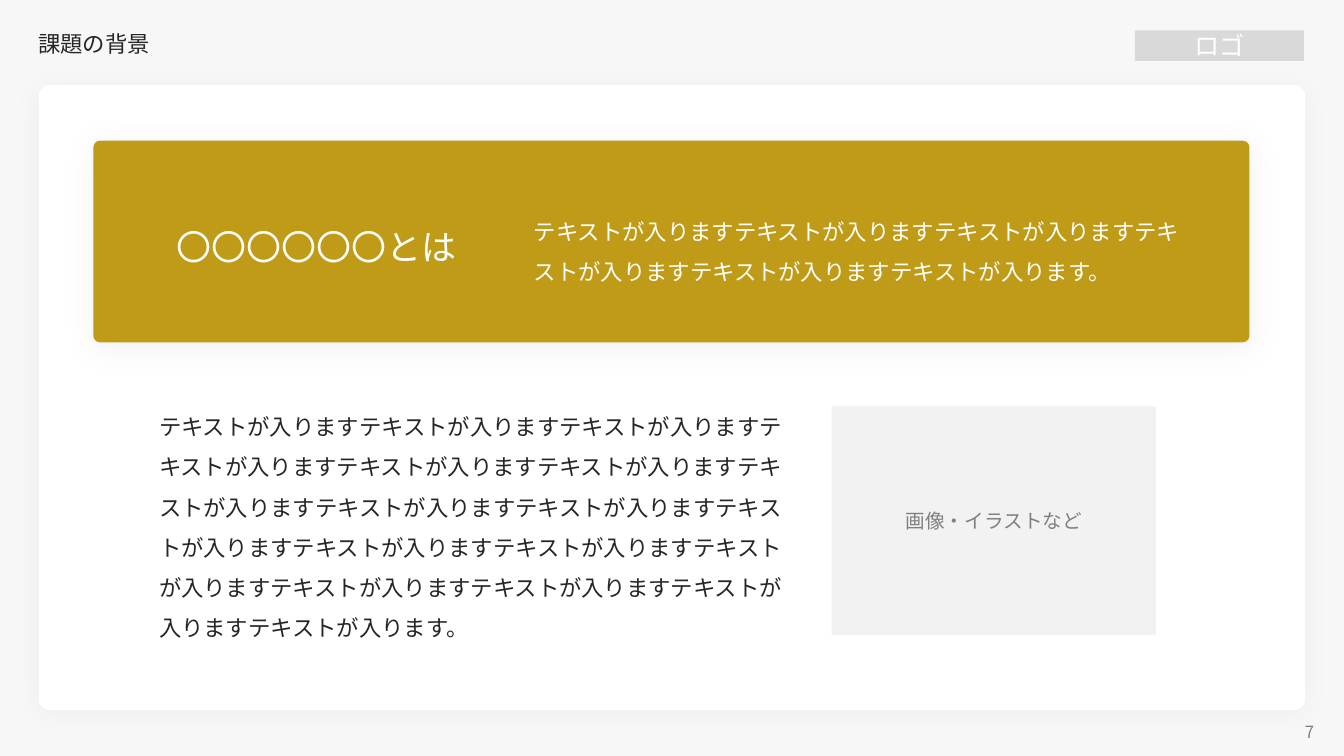
from dataclasses import dataclass
from typing import Optional

from lxml.etree import SubElement
from pptx import Presentation
from pptx.dml.color import RGBColor
from pptx.enum.lang import MSO_LANGUAGE_ID as Language
from pptx.enum.shapes import MSO_SHAPE as Preset
from pptx.enum.text import MSO_ANCHOR as Anchor, MSO_AUTO_SIZE as AutoSize, PP_ALIGN as Align
from pptx.oxml.ns import qn
from pptx.shapes.autoshape import Shape
from pptx.slide import Slide
from pptx.util import Emu, Pt

PX = 9525
PAGE_WIDTH, PAGE_HEIGHT = 1280, 720
JAPANESE_FONT = "Noto Sans CJK JP"
COLORS = {
    "white": "FFFFFF",
    "black": "000000",
    "backdrop": "F7F7F7",
    "logo": "D9D9D9",
    "gold": "C09B17",
    "image": "F2F2F2",
    "ink": "262626",
    "gray": "808080",
}
FILLER = "テキストが入ります"


@dataclass(frozen=True)
class Area:
    left: int
    top: int
    width: int
    height: int

    def emu(self) -> tuple[Emu, ...]:
        return tuple(Emu(side * PX) for side in (self.left, self.top, self.width, self.height))


@dataclass(frozen=True)
class Panel:
    area: Area
    fill: str
    radius: Optional[float] = None
    outline: Optional[str] = None
    shadow: Optional[str] = None
    shadow_opacity: int = 0


def rgb(name: str) -> RGBColor:
    return RGBColor.from_string(COLORS[name])


def add_soft_shadow(shape: Shape, color: str, opacity: int) -> None:
    effects = shape._element.spPr.find(qn("a:effectLst"))
    shadow = SubElement(effects, qn("a:outerShdw"), blurRad=str(Pt(20)), dist=str(Pt(3)),
                        dir="5400000", algn="t", rotWithShape="0")
    tint = SubElement(shadow, qn("a:srgbClr"), val=COLORS[color])
    SubElement(tint, qn("a:alpha"), val=str(opacity * 1000))


def draw_panel(page: Slide, panel: Panel) -> Shape:
    preset = Preset.RECTANGLE if panel.radius is None else Preset.ROUNDED_RECTANGLE
    shape = page.shapes.add_shape(preset, *panel.area.emu())
    if panel.radius is not None:
        shape.adjustments[0] = panel.radius
    shape.fill.solid()
    shape.fill.fore_color.rgb = rgb(panel.fill)
    if panel.outline:
        shape.line.color.rgb = rgb(panel.outline)
        shape.line.width = Pt(4.5)
    else:
        shape.line.fill.background()
    shape.shadow.inherit = False
    if panel.shadow:
        add_soft_shadow(shape, panel.shadow, panel.shadow_opacity)
    return shape


def write(box: Shape, text: str, *, size: int, color: str, font: str = JAPANESE_FONT,
          align: Align = Align.LEFT, anchor: Anchor = Anchor.MIDDLE,
          spacing: float = 1.0, grow: bool = False) -> None:
    frame = box.text_frame
    frame.word_wrap = True
    frame.vertical_anchor = anchor
    frame.auto_size = AutoSize.SHAPE_TO_FIT_TEXT if grow else AutoSize.NONE
    para = frame.paragraphs[0]
    para.alignment = align
    para.line_spacing = spacing
    span = para.add_run()
    span.text = text
    span.font.size = Pt(size)
    span.font.color.rgb = rgb(color)
    span.font.name = font
    span.font.language_id = Language.JAPANESE
    SubElement(span._r.get_or_add_rPr(), qn("a:ea"), typeface=font)


def add_text(page: Slide, area: Area, text: str, **style) -> None:
    write(page.shapes.add_textbox(*area.emu()), text, **style)


def main() -> None:
    deck = Presentation()
    deck.slide_width, deck.slide_height = Emu(PAGE_WIDTH * PX), Emu(PAGE_HEIGHT * PX)
    page = deck.slides.add_slide(deck.slide_layouts[6])

    draw_panel(page, Panel(Area(0, 0, PAGE_WIDTH, PAGE_HEIGHT), "backdrop", radius=0))
    draw_panel(page, Panel(Area(37, 81, 1206, 595), "white", radius=0.017,
                           shadow="black", shadow_opacity=3))
    add_text(page, Area(962, 685, 299, 23), "7", size=12, color="gray", align=Align.RIGHT)
    logo = draw_panel(page, Panel(Area(1081, 29, 161, 29), "logo"))
    write(logo, "ロゴ", size=18, color="white", align=Align.CENTER)
    draw_panel(page, Panel(Area(92, 137, 1095, 186), "gold", radius=0.018, outline="gold",
                           shadow="gray", shadow_opacity=10))

    add_text(page, Area(27, 24, 960, 39), "課題の背景", size=16, color="ink", spacing=0.9)
    add_text(page, Area(159, 210, 355, 50), "〇〇〇〇〇〇とは", size=25, color="white",
             anchor=Anchor.TOP, grow=True)
    add_text(page, Area(499, 190, 640, 83), FILLER * 6 + "。", size=16, color="white",
             anchor=Anchor.TOP, spacing=1.5, grow=True)
    add_text(page, Area(142, 376, 630, 237), FILLER * 17 + "。", size=16, color="ink",
             anchor=Anchor.TOP, spacing=1.5, grow=True)

    image_area = draw_panel(page, Panel(Area(792, 387, 309, 218), "image"))
    write(image_area, "画像・イラストなど", size=14, color="gray", font="Roboto",
          align=Align.CENTER)

    deck.save("out.pptx")


if __name__ == "__main__":
    main()
